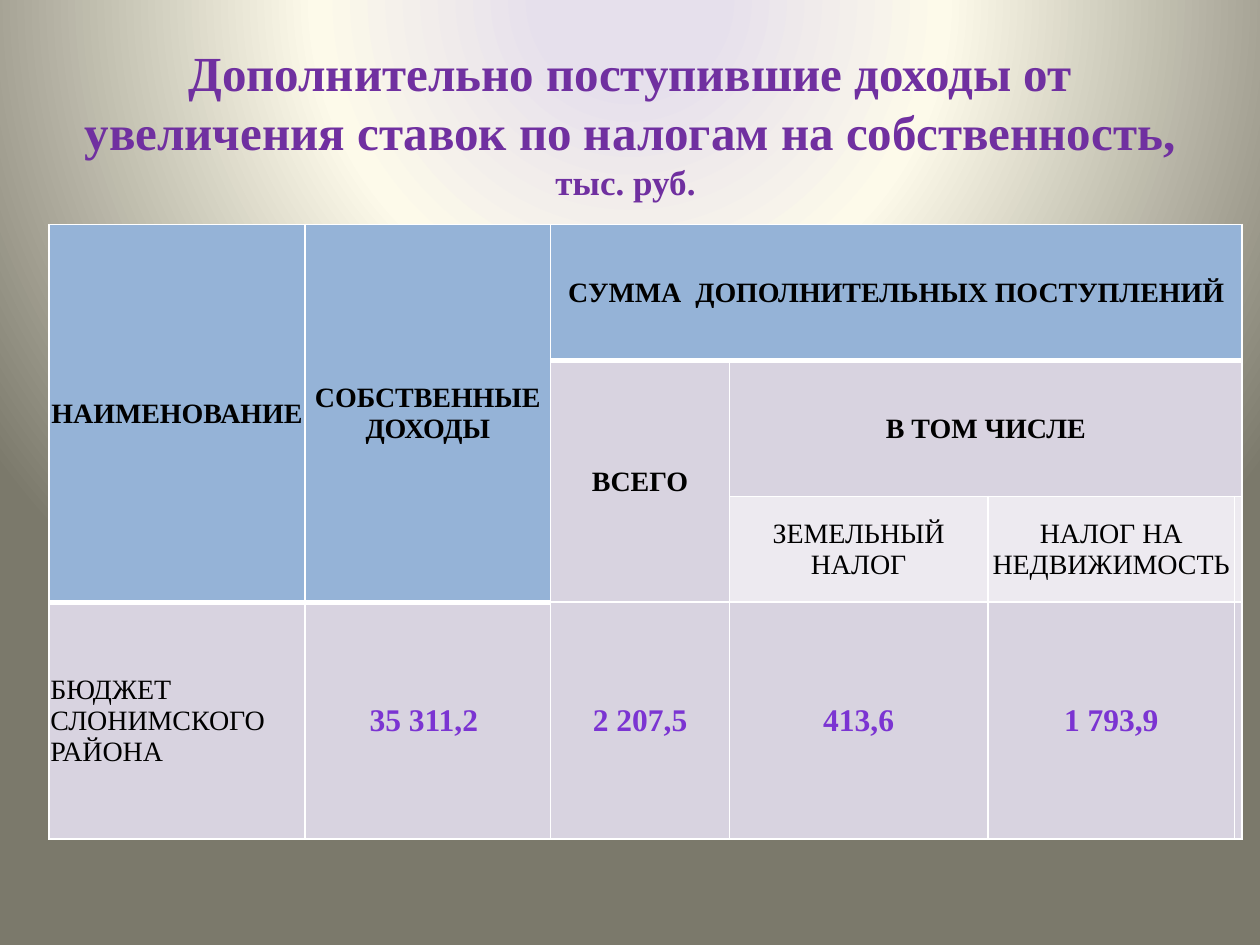
from pptx import Presentation
from pptx.dml.color import RGBColor
from pptx.enum.text import MSO_ANCHOR, PP_ALIGN
from pptx.oxml import parse_xml
from pptx.oxml.ns import nsdecls, qn
from pptx.util import Inches, Pt

FONT = "Times New Roman"
PURPLE = RGBColor(0x70, 0x30, 0xA0)
VIOLET = RGBColor(0x7B, 0x34, 0xD2)
BLACK = RGBColor(0, 0, 0)
WHITE = RGBColor(0xFF, 0xFF, 0xFF)
BLUE = RGBColor(0x95, 0xB3, 0xD7)
LILAC = RGBColor(0xD8, 0xD3, 0xE0)
PALE = RGBColor(0xED, 0xEA, 0xF0)
GLOW = {11: RGBColor(0xE6, 0xE0, 0xEC), 40: RGBColor(0xFD, 0xFA, 0xEA),
        100: RGBColor(0x7B, 0x79, 0x6B)}

COLUMNS = [2.03, 1.95, 1.42, 2.05, 1.96, 0.04]
ROWS = [1.08, 1.08, 0.84, 1.88]

HEADING = {"size": Pt(16), "bold": True}
LABEL = {"size": Pt(16), "bold": False}
FIGURE = {"size": Pt(18), "bold": True}

# (row, column), (rows, columns) spanned, text, fill, font format, font colour
CELLS = [
    ((0, 0), (3, 1), "НАИМЕНОВАНИЕ", BLUE, HEADING, BLACK),
    ((0, 1), (3, 1), "СОБСТВЕННЫЕ ДОХОДЫ", BLUE, HEADING, BLACK),
    ((0, 2), (1, 4), "СУММА  ДОПОЛНИТЕЛЬНЫХ ПОСТУПЛЕНИЙ", BLUE, HEADING, BLACK),
    ((1, 2), (2, 1), "ВСЕГО", LILAC, HEADING, BLACK),
    ((1, 3), (1, 3), "В ТОМ ЧИСЛЕ", LILAC, HEADING, BLACK),
    ((2, 3), (1, 1), "ЗЕМЕЛЬНЫЙ НАЛОГ", PALE, LABEL, BLACK),
    ((2, 4), (1, 1), "НАЛОГ НА НЕДВИЖИМОСТЬ", PALE, LABEL, BLACK),
    ((2, 5), (1, 1), "", PALE, LABEL, BLACK),
    ((3, 0), (1, 1), "БЮДЖЕТ СЛОНИМСКОГО РАЙОНА", LILAC, LABEL, BLACK),
    ((3, 1), (1, 1), "35 311,2 ", LILAC, FIGURE, VIOLET),
    ((3, 2), (1, 1), "2 207,5", LILAC, FIGURE, VIOLET),
    ((3, 3), (1, 1), "413,6", LILAC, FIGURE, VIOLET),
    ((3, 4), (1, 1), "1 793,9", LILAC, FIGURE, VIOLET),
    ((3, 5), (1, 1), "", LILAC, FIGURE, VIOLET),
]


def set_format(target, values):
    for name, value in values.items():
        setattr(target, name, value)


def set_font(font, values, color):
    set_format(font, {"name": FONT, **values})
    font.color.rgb = color


def paint_background(page):
    """Circular glow centred above the top edge."""
    stops = "".join(f'<a:gs pos="{pos * 1000}"><a:srgbClr val="{color}"/></a:gs>'
                    for pos, color in GLOW.items())
    page._element.find(qn("p:cSld")).insert(0, parse_xml(
        f'<p:bg {nsdecls("p", "a")}><p:bgPr><a:gradFill rotWithShape="1">'
        f'<a:gsLst>{stops}</a:gsLst><a:path path="circle">'
        '<a:fillToRect l="50000" t="-80000" r="50000" b="180000"/></a:path>'
        '</a:gradFill><a:effectLst/></p:bgPr></p:bg>'))


def add_title(page, left, top, width, height):
    box = page.shapes.add_textbox(left, top, width, height)
    set_format(box.text_frame,
               {"word_wrap": True, "vertical_anchor": MSO_ANCHOR.MIDDLE})
    para = box.text_frame.paragraphs[0]
    para.alignment = PP_ALIGN.CENTER
    for text, size in [
        ("Дополнительно поступившие доходы от увеличения ставок "
         "по налогам на собственность, ", 28),
        ("тыс. руб. ", 20),
    ]:
        span = para.add_run()
        span.text = text
        set_font(span.font, {"size": Pt(size), "bold": True}, PURPLE)


def set_borders(cell, widths):
    """Borders come before the fill, in the order left, right, top, bottom."""
    properties = cell._tc.get_or_add_tcPr()
    for index, (side, width) in enumerate(widths.items()):
        properties.insert(index, parse_xml(
            f'<a:ln{side} {nsdecls("a")} w="{Pt(width)}"><a:solidFill>'
            f'<a:srgbClr val="{WHITE}"/></a:solidFill></a:ln{side}>'))


def add_income_table(page, left, top, width, height):
    table = page.shapes.add_table(len(ROWS), len(COLUMNS),
                                  left, top, width, height).table
    set_format(table, {"first_row": False, "horz_banding": False})
    for column, size in zip(table.columns, COLUMNS):
        column.width = Inches(size)
    for row, size in zip(table.rows, ROWS):
        row.height = Inches(size)

    for (row, col), (tall, wide), text, fill, font, color in CELLS:
        cell = table.cell(row, col)
        if tall * wide > 1:
            cell.merge(table.cell(row + tall - 1, col + wide - 1))
        para = cell.text_frame.paragraphs[0]
        para.alignment = PP_ALIGN.LEFT if (row, col) == (3, 0) else PP_ALIGN.CENTER
        if text:
            span = para.add_run()
            span.text = text
            set_font(span.font, font, color)

        # Every covered cell shares the fill and borders of its block
        for r in range(row, row + tall):
            for c in range(col, col + wide):
                part = table.cell(r, c)
                set_format(part, {"vertical_anchor": MSO_ANCHOR.MIDDLE,
                                  "margin_left": Inches(0.01),
                                  "margin_right": Inches(0.01),
                                  "margin_top": Inches(0.01),
                                  "margin_bottom": 0})
                part.fill.solid()
                part.fill.fore_color.rgb = fill
                header_end = 3 if c < 2 else 1
                set_borders(part, {"L": 1, "R": 1,
                                   "T": 3 if r == header_end else 1,
                                   "B": 3 if r + 1 == header_end else 1})


def main():
    deck = Presentation()
    deck.slide_width, deck.slide_height = Inches(10), Inches(7.5)
    page = deck.slides.add_slide(deck.slide_layouts[6])
    paint_background(page)
    add_title(page, Inches(0.5), Inches(0.23), Inches(9), Inches(1.48))
    add_income_table(page, Inches(0.39), Inches(1.78), Inches(9.45), Inches(4.88))
    deck.save("out.pptx")


if __name__ == "__main__":
    main()
